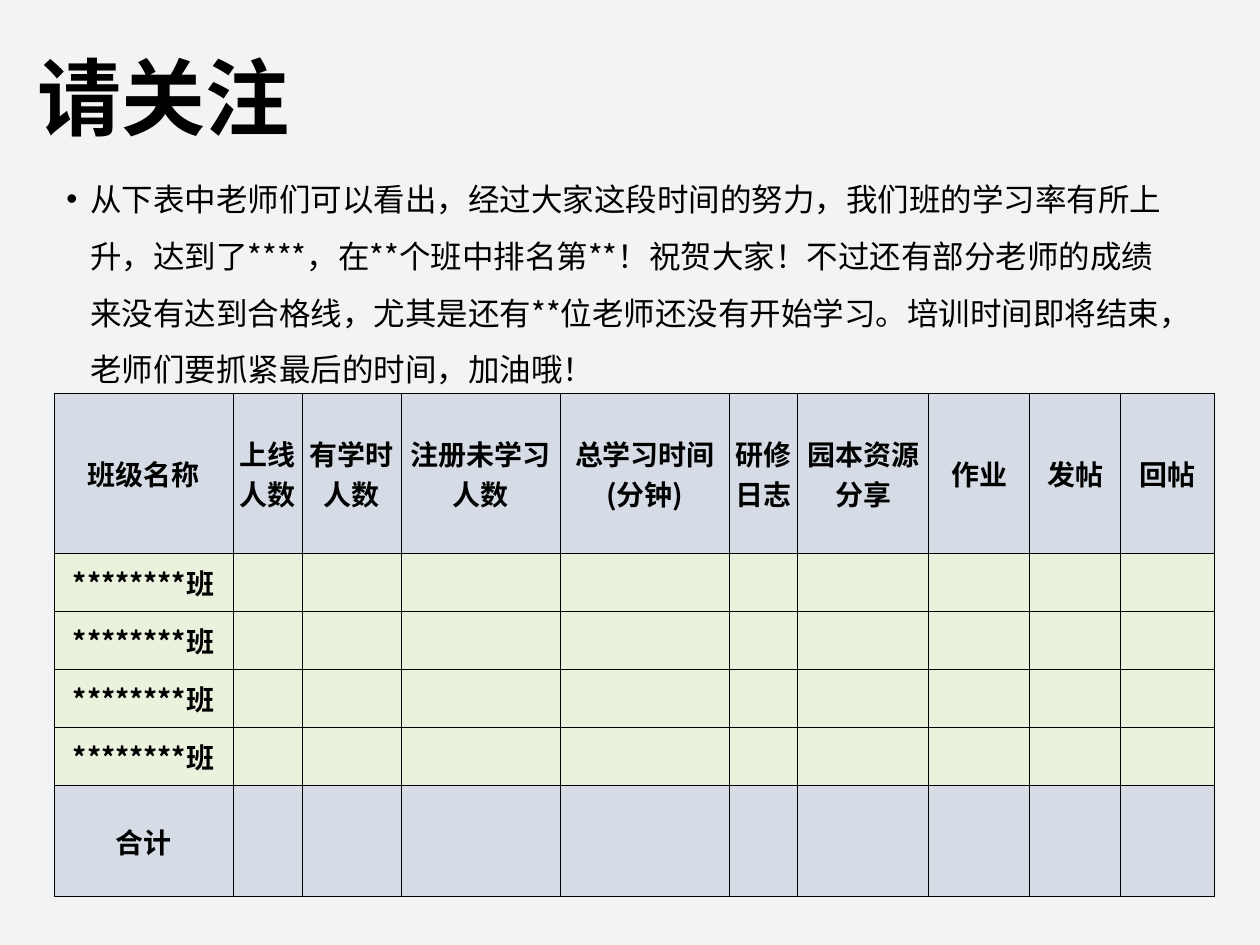
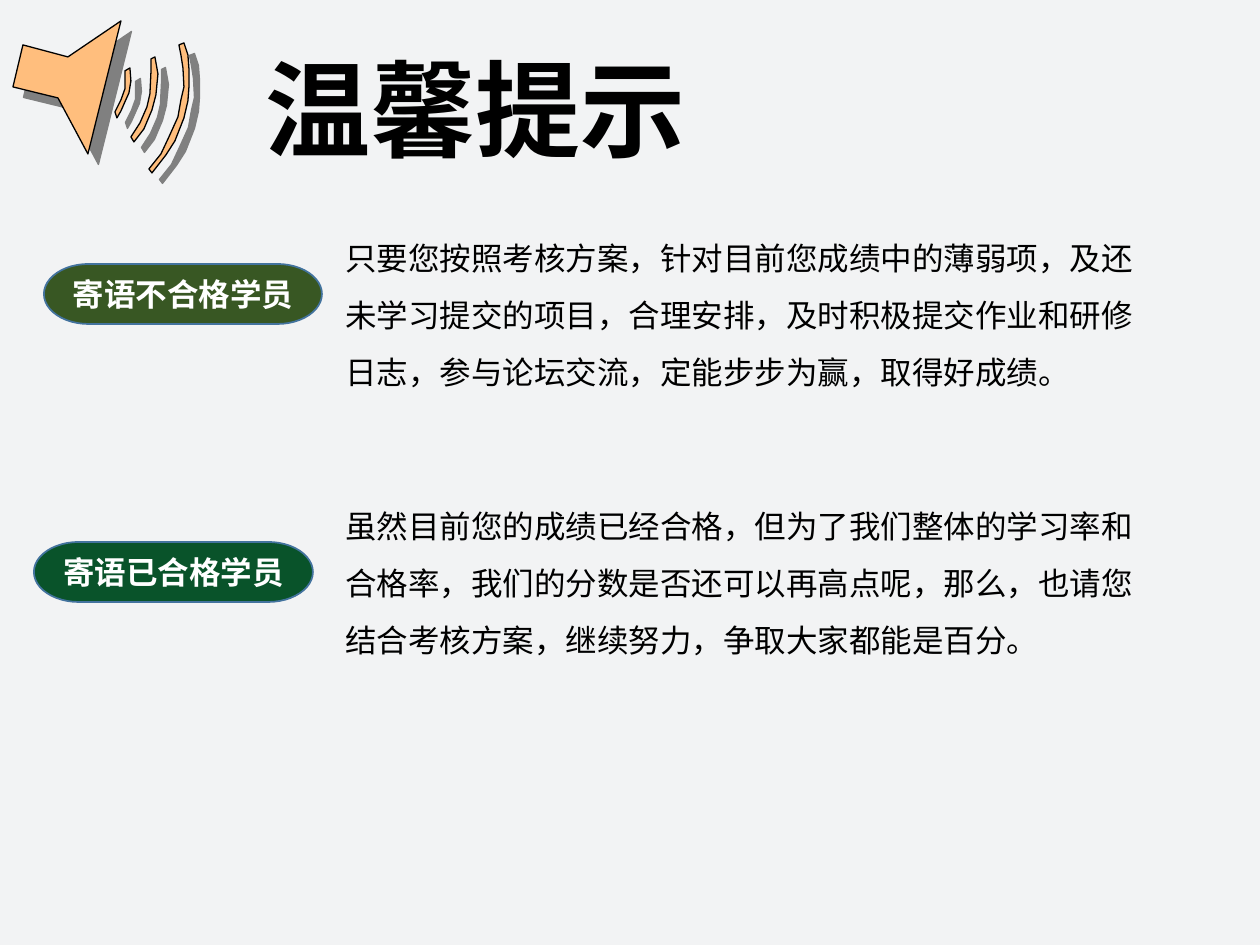
from lxml.etree import SubElement
from pptx import Presentation
from pptx.dml.color import RGBColor
from pptx.enum.shapes import MSO_SHAPE as Shape
from pptx.enum.text import MSO_ANCHOR as Anchor, MSO_AUTO_SIZE as AutoSize, PP_ALIGN as Align
from pptx.oxml import parse_xml
from pptx.oxml.ns import nsdecls, qn
from pptx.util import Emu, Pt

PX = 914400 / 126
CJK_FONT, TITLE_FONT = "Noto Sans CJK SC", "Arial"

BACKGROUND = RGBColor(0xF2, 0xF3, 0xF4)
BLACK = RGBColor(0, 0, 0)
WHITE = RGBColor(0xFF, 0xFF, 0xFF)
BLUE_GREY = RGBColor(0xD6, 0xDC, 0xE5)
PALE_GREEN = RGBColor(0xEA, 0xF1, 0xDD)
OLIVE = RGBColor(0x38, 0x57, 0x23)
GREEN = RGBColor(0x09, 0x53, 0x2A)
PILL_LINE = RGBColor(0x43, 0x73, 0x9E)
ORANGE = RGBColor(0xFF, 0xBE, 0x7D)
SHADOW = RGBColor(0x80, 0x80, 0x80)

# Content: places are (left, top, width, height) in px
NOTICE = {
    "title": ("请关注", 48, (25, 26, 857, 120)),
    "text": "从下表中老师们可以看出，经过大家这段时间的努力，我们班的学习率有所上升，"
            "达到了****，在**个班中排名第**！祝贺大家！不过还有部分老师的成绩来没有达到合格线，"
            "尤其是还有**位老师还没有开始学习。培训时间即将结束，老师们要抓紧最后的时间，加油哦！",
    "place": (54, 155, 1134, 638),
}
COLUMNS = [
    ("班级名称", 179), ("上线人数", 69), ("有学时人数", 99), ("注册未学习人数", 159),
    ("总学习时间(分钟)", 170), ("研修日志", 68), ("园本资源分享", 131),
    ("作业", 101), ("发帖", 91), ("回帖", 94),
]
CLASSES = ["********班"] * 4
HEADER_HEIGHT, CLASS_HEIGHT, TOTAL_HEIGHT = 160, 58, 112
TABLE_LEFT, TABLE_TOP = 54, 393

REMINDER_TITLE = ("温馨提示", 60, (253, 35, 857, 120))
MESSAGES = [
    ("寄语不合格学员", OLIVE, (44, 264, 278, 60),
     "只要您按照考核方案，针对目前您成绩中的薄弱项，及还未学习提交的项目，合理安排，"
     "及时积极提交作业和研修日志，参与论坛交流，定能步步为赢，取得好成绩。",
     (333, 214, 814, 184)),
    ("寄语已合格学员", GREEN, (34, 542, 279, 60),
     "虽然目前您的成绩已经合格，但为了我们整体的学习率和合格率，我们的分数是否还可以再高点呢，"
     "那么，也请您结合考核方案，继续努力，争取大家都能是百分。",
     (333, 482, 819, 184)),
]
LOUDSPEAKER = [
    [(23, 45), (68, 57), (121, 21), (88, 154), (58, 98), (13, 87)],
    [(125, 71), (130, 68), (131, 81), (129, 93), (125, 102), (121, 111), (117, 118),
     (115, 112), (121, 100), (125, 89), (125, 79)],
    [(155, 57), (158, 74), (156, 95), (152, 110), (144, 129), (134, 142),
     (131, 137), (140, 123), (147, 107), (150, 94), (151, 73), (151, 59)],
    [(179, 45), (184, 43), (188, 55), (189, 69), (189, 87), (188, 101), (184, 118),
     (175, 141), (166, 155), (152, 173), (149, 169), (161, 154), (169, 137),
     (178, 117), (181, 100), (184, 87), (183, 68), (181, 55)],
]


def emu(*lengths):
    return [Emu(round(length * PX)) for length in lengths]


def write(frame, text, size, color=BLACK, bold=False, font=CJK_FONT, align=Align.LEFT, spacing=None):
    para = frame.paragraphs[0]
    para.alignment = align
    para.line_spacing = spacing
    span = para.add_run()
    span.text = text
    span.font.size = Pt(size)
    span.font.bold = bold
    span.font.color.rgb = color
    span.font.name = font
    SubElement(span.font._element, qn("a:ea")).set("typeface", CJK_FONT)
    return para


def add_titled_slide(deck, title):
    text, size, place = title
    page = deck.slides.add_slide(deck.slide_layouts[5])
    box = page.shapes.title
    box.left, box.top, box.width, box.height = emu(*place)
    frame = box.text_frame
    frame.auto_size = AutoSize.NONE
    frame.vertical_anchor = Anchor.MIDDLE
    write(frame, text, size, bold=True, font=TITLE_FONT, spacing=1.2)
    return page


def add_body(page, text, place):
    frame = page.shapes.add_textbox(*emu(*place)).text_frame
    frame.word_wrap = True
    return write(frame, text, 18, spacing=1.5)


def add_bullet(para):
    para.space_before = Pt(7.5)
    props = para._p.get_or_add_pPr()
    indent = emu(24)[0]
    props.set("marL", str(indent))
    props.set("indent", str(-indent))
    SubElement(props, qn("a:buFont")).set("typeface", TITLE_FONT)
    SubElement(props, qn("a:buChar")).set("char", "•")


def format_cell(cell, text, fill):
    cell.fill.solid()
    cell.fill.fore_color.rgb = fill
    cell.vertical_anchor = Anchor.MIDDLE
    cell.margin_left, cell.margin_top, cell.margin_right, cell.margin_bottom = emu(1, 1, 1, 0)
    if text:
        write(cell.text_frame, text, 16, bold=True, align=Align.CENTER)
    props = cell._tc.get_or_add_tcPr()
    for position, side in enumerate("LRTB"):
        props.insert(position, parse_xml(
            f'<a:ln{side} {nsdecls("a")} w="{Pt(0.5)}"><a:solidFill>'
            f'<a:srgbClr val="{BLACK}"/></a:solidFill></a:ln{side}>'))


def add_class_table(page):
    names, widths = zip(*COLUMNS)
    blanks = [""] * (len(names) - 1)
    rows = [(names, HEADER_HEIGHT, BLUE_GREY)]
    rows += [([name, *blanks], CLASS_HEIGHT, PALE_GREEN) for name in CLASSES]
    rows += [(["合计", *blanks], TOTAL_HEIGHT, BLUE_GREY)]
    size = sum(widths), sum(height for _, height, _ in rows)
    table = page.shapes.add_table(len(rows), len(names), *emu(TABLE_LEFT, TABLE_TOP, *size)).table
    for column, width in zip(table.columns, emu(*widths)):
        column.width = width
    for row, (texts, height, fill) in zip(table.rows, rows):
        row.height = emu(height)[0]
        for cell, text in zip(row.cells, texts):
            format_cell(cell, text, fill)


def paint(shape, fill, line, width):
    shape.shadow.inherit = False
    shape.fill.solid()
    shape.fill.fore_color.rgb = fill
    shape.line.color.rgb = line
    shape.line.width = Pt(width)


def add_pill(page, text, fill, place):
    pill = page.shapes.add_shape(Shape.FLOWCHART_TERMINATOR, *emu(*place))
    paint(pill, fill, PILL_LINE, 1)
    pill.text_frame.vertical_anchor = Anchor.MIDDLE
    pill.text_frame.word_wrap = True
    write(pill.text_frame, text, 18, WHITE, bold=True, align=Align.CENTER)


def add_loudspeaker(page):
    cone, *waves = LOUDSPEAKER
    builder = page.shapes.build_freeform(*cone[0], scale=PX)
    builder.add_line_segments(cone[1:], close=True)
    for wave in waves:
        builder.move_to(*wave[0])
        builder.add_line_segments(wave[1:], close=True)
    speaker = builder.convert_to_shape()
    paint(speaker, ORANGE, BLACK, 0.75)
    effects = speaker._element.spPr.find(qn("a:effectLst"))
    effects.append(parse_xml(
        f'<a:outerShdw {nsdecls("a")} dist="{Pt(8.5)}" dir="{45 * 60000}" algn="ctr" '
        f'rotWithShape="0"><a:srgbClr val="{SHADOW}"/></a:outerShdw>'))


def main():
    deck = Presentation()
    deck.slide_width, deck.slide_height = emu(1260, 945)
    backdrop = deck.slide_master.background.fill
    backdrop.solid()
    backdrop.fore_color.rgb = BACKGROUND

    notice = add_titled_slide(deck, NOTICE["title"])
    add_bullet(add_body(notice, NOTICE["text"], NOTICE["place"]))
    add_class_table(notice)

    reminder = add_titled_slide(deck, REMINDER_TITLE)
    for label, fill, pill_place, text, text_place in MESSAGES:
        add_body(reminder, text, text_place)
        add_pill(reminder, label, fill, pill_place)
    add_loudspeaker(reminder)

    deck.save("out.pptx")


if __name__ == "__main__":
    main()
